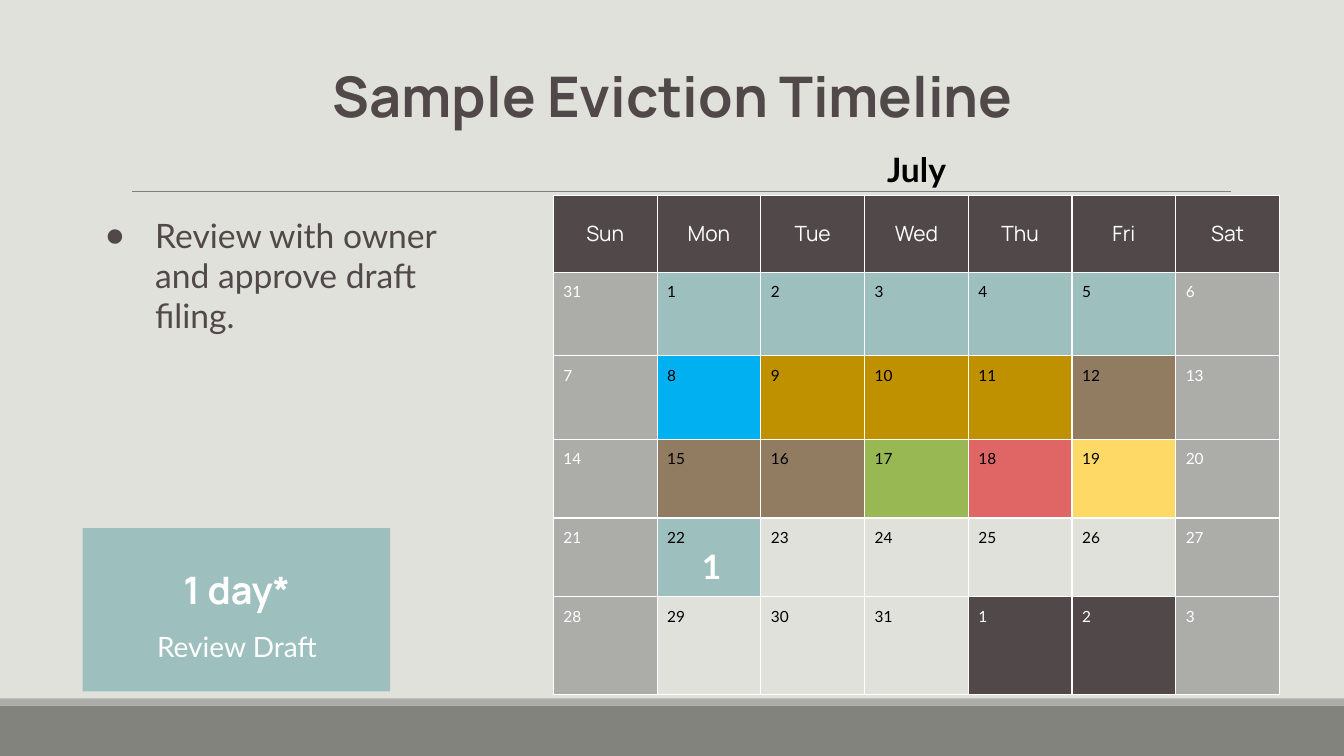
from dataclasses import dataclass

from lxml import etree
from pptx import Presentation, util as u
from pptx.dml.color import RGBColor
from pptx.enum import shapes, text
from pptx.oxml.ns import qn

COLUMNS, ROWS = 160, 90
WIDTH, HEIGHT = u.Inches(13.33), u.Inches(7.5)


@dataclass(frozen=True)
class Theme:
    heading: str = "Manrope"
    body: str = "Lato"
    paper: str = "E1E1DB"
    ink: str = "514949"
    black: str = "000000"
    white: str = "FFFFFF"
    base: str = "82837C"
    grey: str = "ACADA8"
    rule: str = "7F7F7F"
    teal: str = "9DBFBE"
    blue: str = "00B0F0"
    gold: str = "BF9000"
    brown: str = "927C61"
    green: str = "97B853"
    red: str = "E06666"
    yellow: str = "FFD966"
    title_size: int = 40
    card_size: int = 27
    text_size: int = 24
    caption_size: int = 20
    weekday_size: int = 15
    day_size: int = 11


THEME = Theme()
WEEKDAYS = ["Sun", "Mon", "Tue", "Wed", "Thu", "Fri", "Sat"]
DAYS = [31, *range(1, 32), 1, 2, 3]
STAGES = [
    ["grey"] + ["teal"] * 5 + ["grey"],
    ["grey", "blue"] + ["gold"] * 3 + ["brown", "grey"],
    ["grey", "brown", "brown", "green", "red", "yellow", "grey"],
    ["grey", "teal"] + ["paper"] * 4 + ["grey"],
    ["grey"] + ["paper"] * 3 + ["ink", "ink", "grey"],
]
WEEK_ROWS = [9.12, 9.96, 9.96, 9.36, 9.36, 11.64]
MARKED_DAY = 22


@dataclass(frozen=True)
class Box:
    """A rectangle in grid columns and rows."""
    left: float
    top: float
    width: float
    height: float

    def inner(self, dx, dy, width, height):
        return Box(self.left + dx, self.top + dy, width, height)

    def emu(self):
        return (across(self.left), down(self.top),
                across(self.width), down(self.height))


def across(columns):
    return u.Emu(round(WIDTH * columns / COLUMNS))


def down(rows):
    return u.Emu(round(HEIGHT * rows / ROWS))


def paint(fill, color):
    fill.solid()
    fill.fore_color.rgb = RGBColor.from_string(color)


def set_insets(holder, left, top, right, bottom):
    holder.margin_left, holder.margin_top = u.Inches(left), u.Inches(top)
    holder.margin_right, holder.margin_bottom = u.Inches(right), u.Inches(bottom)


def write(para, words, size, color, face=THEME.body, bold=False, align=text.PP_ALIGN.LEFT):
    para.text = words
    para.alignment = align
    para.font.size, para.font.name, para.font.bold = u.Pt(size), face, bold
    para.font.color.rgb = RGBColor.from_string(color)


def prepare_frame(shape, inset_x=0.05, inset_y=0.03, anchor=text.MSO_ANCHOR.TOP):
    frame = shape.text_frame
    frame.word_wrap = True
    frame.auto_size = text.MSO_AUTO_SIZE.NONE
    frame.vertical_anchor = anchor
    set_insets(frame, inset_x, inset_y, inset_x, inset_y)
    return frame


def place(shape, box):
    shape.left, shape.top, shape.width, shape.height = box.emu()


def add_block(page, box, color):
    block = page.shapes.add_shape(shapes.MSO_SHAPE.RECTANGLE, *box.emu())
    block.shadow.inherit = False
    paint(block.fill, color)
    block.line.fill.background()


def add_backdrop(page, box):
    paint(page.background.fill, THEME.paper)
    add_block(page, box.inner(0, 84, box.width, 6), THEME.base)
    add_block(page, box.inner(0, 83.16, box.width, 0.84), THEME.grey)
    rule = page.shapes.add_connector(
        shapes.MSO_CONNECTOR.STRAIGHT,
        across(15.72), down(22.8), across(146.52), down(22.8))
    rule.line.width = u.Pt(0.75)
    rule.line.color.rgb = RGBColor.from_string(THEME.rule)
    etree.SubElement(rule._element.spPr, qn("a:effectLst"))


def fill_title(page, box):
    title = page.shapes.title
    place(title, box)
    frame = prepare_frame(title, anchor=text.MSO_ANCHOR.MIDDLE)
    write(frame.paragraphs[0], "Sample Eviction Timeline", THEME.title_size,
          THEME.ink, THEME.heading, True, text.PP_ALIGN.CENTER)


def fill_steps(page, box):
    body = page.placeholders[1]
    place(body, box)
    para = prepare_frame(body).paragraphs[0]
    write(para, "Review with owner and approve draft filing.", THEME.text_size, THEME.ink)
    para.space_before = u.Pt(0)
    layout = para._p.get_or_add_pPr()
    layout.set("marL", str(u.Inches(0.67)))
    layout.set("indent", str(u.Inches(-0.5)))
    bullet_color = etree.SubElement(layout, qn("a:buClr"))
    etree.SubElement(bullet_color, qn("a:srgbClr"), val=THEME.ink)
    etree.SubElement(layout, qn("a:buChar"), char="●")


def add_duration_card(page, box):
    add_block(page, box, THEME.teal)
    label = page.shapes.add_textbox(
        *box.inner(3.12, 1.56, box.width - 6.12, box.height - 3.12).emu())
    frame = prepare_frame(label)
    write(frame.paragraphs[0], "1 day*", THEME.card_size, THEME.white,
          THEME.heading, True, text.PP_ALIGN.CENTER)
    write(frame.add_paragraph(), "Review Draft", THEME.caption_size, THEME.white,
          align=text.PP_ALIGN.CENTER)
    for para in frame.paragraphs:
        para.line_spacing = 1.5


def style_cell(cell, color):
    """Give the cell white borders and a plain fill."""
    properties = cell._tc.get_or_add_tcPr()
    for side in ("lnL", "lnR", "lnT", "lnB"):
        border = etree.SubElement(properties, qn(f"a:{side}"), w=str(u.Pt(1)))
        solid = etree.SubElement(border, qn("a:solidFill"))
        etree.SubElement(solid, qn("a:srgbClr"), val=THEME.white)
    paint(cell.fill, color)


def add_calendar(page, box):
    """Month name on top, day grid below it."""
    label = page.shapes.add_textbox(
        *box.inner((box.width - 36.6) / 2, 0, 36.6, 8.04).emu())
    write(prepare_frame(label, 0.13, 0.13).paragraphs[0], "July", THEME.text_size,
          THEME.black, bold=True, align=text.PP_ALIGN.CENTER)

    grid = box.inner(0, box.height - sum(WEEK_ROWS), box.width, sum(WEEK_ROWS))
    table = page.shapes.add_table(len(WEEK_ROWS), len(WEEKDAYS), *grid.emu()).table
    table.first_row = table.horz_banding = False
    for row, height in zip(table.rows, WEEK_ROWS):
        row.height = down(height)
    for column, name in enumerate(WEEKDAYS):
        table.columns[column].width = across(box.width / len(WEEKDAYS))
        cell = table.cell(0, column)
        style_cell(cell, THEME.ink)
        set_insets(cell, 0.07, 0.03, 0.07, 0.03)
        cell.vertical_anchor = text.MSO_ANCHOR.MIDDLE
        write(cell.text_frame.paragraphs[0], name, THEME.weekday_size, THEME.white,
              THEME.heading, align=text.PP_ALIGN.CENTER)

    for index, day in enumerate(DAYS):
        week, column = divmod(index, len(WEEKDAYS))
        stage = STAGES[week][column]
        cell = table.cell(week + 1, column)
        style_cell(cell, getattr(THEME, stage))
        set_insets(cell, 0.1, 0.1, 0.05, 0.03)
        color = THEME.white if stage in ("grey", "ink") else THEME.black
        write(cell.text_frame.paragraphs[0], str(day), THEME.day_size, color)
        if day == MARKED_DAY:
            write(cell.text_frame.add_paragraph(), "1", THEME.text_size, THEME.white,
                  bold=True, align=text.PP_ALIGN.CENTER)


def main():
    deck = Presentation()
    deck.slide_width, deck.slide_height = WIDTH, HEIGHT
    page = deck.slides.add_slide(deck.slide_layouts[1])
    add_backdrop(page, Box(0, 0, COLUMNS, ROWS))
    fill_title(page, Box(18.6, 6.96, 122.9, 8.64))
    fill_steps(page, Box(9.84, 25.2, 45.6, 26.4))
    add_duration_card(page, Box(9.84, 62.88, 36.6, 19.44))
    add_calendar(page, Box(65.88, 16.2, 86.45, 66.48))
    deck.save("out.pptx")


if __name__ == "__main__":
    main()
